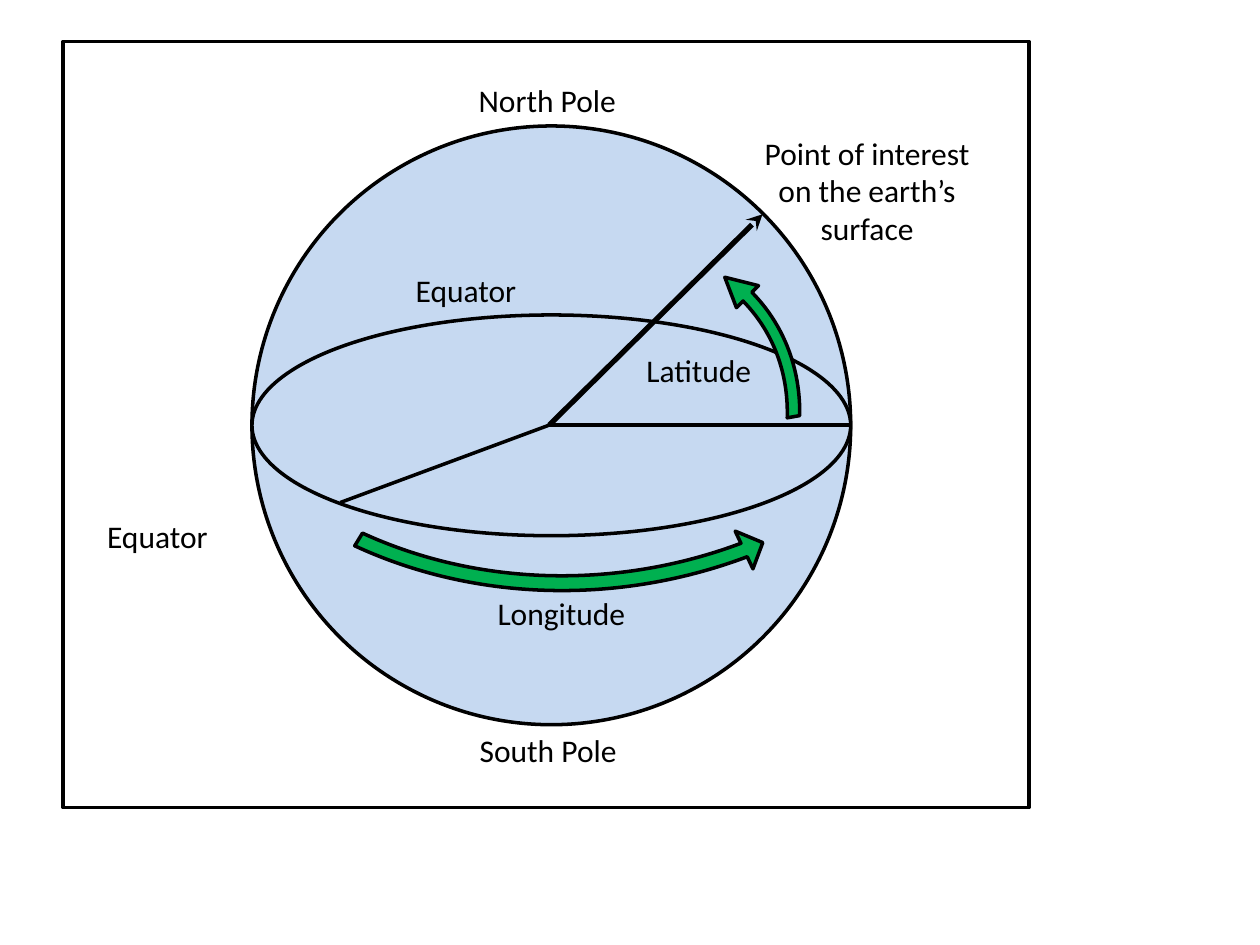
"""Draw a globe that explains latitude and longitude."""
from dataclasses import dataclass
from typing import Optional

from pptx import Presentation
from pptx.dml.color import RGBColor
from pptx.enum.shapes import MSO_CONNECTOR as CONN, MSO_SHAPE as SHAPE
from pptx.enum.text import MSO_AUTO_SIZE as AUTO, PP_ALIGN as ALIGN
from pptx.oxml.ns import qn
from pptx.util import Cm, Pt

BLACK, SKY, GREEN = "000000", "C6D9F1", "00B050"


@dataclass
class Figure:
    kind: SHAPE
    box: tuple[float, float, float, float]
    fill: Optional[str] = None
    rotation: float = 0
    flip: bool = False
    adjust: tuple[float, ...] = ()


@dataclass
class Ray:
    start: tuple[float, float]
    end: tuple[float, float]
    width: float = 2
    head: Optional[str] = None


@dataclass
class Label:
    text: str
    left: float
    top: float
    width: float
    height: float = 1.02
    align: ALIGN = ALIGN.LEFT
    wrap: bool = False


CENTER = (11.07, 8.57)
GLOBE = [
    Figure(SHAPE.OVAL, (5.08, 2.54, 12.07, 12.07), SKY),
    Figure(SHAPE.OVAL, (5.08, 6.35, 12.07, 4.45), SKY),
]
RAYS = [
    Ray(CENTER, (6.86, 10.13)),
    Ray(CENTER, (17.15, 8.57)),
    Ray(CENTER, (15.37, 4.32), 3, "stealth"),
]
ARROWS_AND_FRAME = [
    Figure(SHAPE.CIRCULAR_ARROW, (6.35, 3.58, 8.97, 11.53), GREEN, 60.1, True,
           (0.028, 3.814, 59.141, 42.28, 0.035)),
    Figure(SHAPE.CIRCULAR_ARROW, (2.03, -5.38, 19.56, 17.5), GREEN, 166.7, True,
           (0.017, 1.665, 59.486, 27.178, 0.024)),
    Figure(SHAPE.RECTANGLE, (1.27, 0.84, 19.48, 15.44)),
]
LABELS = [
    Label("North Pole", 9.4, 1.5, 3.3),
    Label("South Pole", 9.42, 14.61, 3.3),
    Label("Equator", 8.13, 5.33, 2.57),
    Label("Point of interest on the earth’s surface", 15.04, 2.57, 4.88, 2.57,
          ALIGN.CENTER, True),
    Label("Latitude", 12.78, 6.96, 2.67),
    Label("Longitude", 9.78, 11.86, 3.12),
    Label("Equator", 1.91, 10.29, 2.57),
]


def paint(fmt, color: str) -> None:
    fmt.solid()
    fmt.fore_color.rgb = RGBColor.from_string(color)


def outline(line, width: float) -> None:
    paint(line.fill, BLACK)
    line.width = Pt(width)


def draw_figure(s, fig: Figure) -> None:
    sp = s.shapes.add_shape(fig.kind, *map(Cm, fig.box))
    sp.shadow.inherit = False
    sp.rotation = fig.rotation
    for i, value in enumerate(fig.adjust):
        sp.adjustments[i] = value
    if fig.flip:
        sp._element.spPr.find(qn("a:xfrm")).set("flipV", "1")
    if fig.fill:
        paint(sp.fill, fig.fill)
    else:
        sp.fill.background()
    outline(sp.line, 2)


def draw_ray(s, ray: Ray) -> None:
    cxn = s.shapes.add_connector(CONN.STRAIGHT, *map(Cm, ray.start + ray.end))
    outline(cxn.line, ray.width)
    spPr = cxn._element.spPr
    if ray.head:
        ln = spPr.find(qn("a:ln"))
        ln.append(ln.makeelement(qn("a:tailEnd"), {"type": ray.head}))
    spPr.append(spPr.makeelement(qn("a:effectLst"), {}))


def add_text(tf, text: str, *, size: float = 18, font: str = "Calibri",
             color: str = BLACK, align: ALIGN = ALIGN.LEFT) -> None:
    p = tf.paragraphs[0]
    p.alignment = align
    r = p.add_run()
    r.text = text
    r.font.size, r.font.name = Pt(size), font
    paint(r.font.fill, color)


def draw_label(s, label: Label) -> None:
    box = (label.left, label.top, label.width, label.height)
    tf = s.shapes.add_textbox(*map(Cm, box)).text_frame
    tf.word_wrap = label.wrap
    tf.auto_size = AUTO.SHAPE_TO_FIT_TEXT
    add_text(tf, label.text, align=label.align)


def main() -> None:
    prs = Presentation()
    prs.slide_width, prs.slide_height = Cm(25.4), Cm(19.05)
    s = prs.slides.add_slide(prs.slide_layouts[6])
    for fig in GLOBE:
        draw_figure(s, fig)
    for ray in RAYS:
        draw_ray(s, ray)
    for fig in ARROWS_AND_FRAME:
        draw_figure(s, fig)
    for label in LABELS:
        draw_label(s, label)
    prs.save("out.pptx")


if __name__ == "__main__":
    main()
